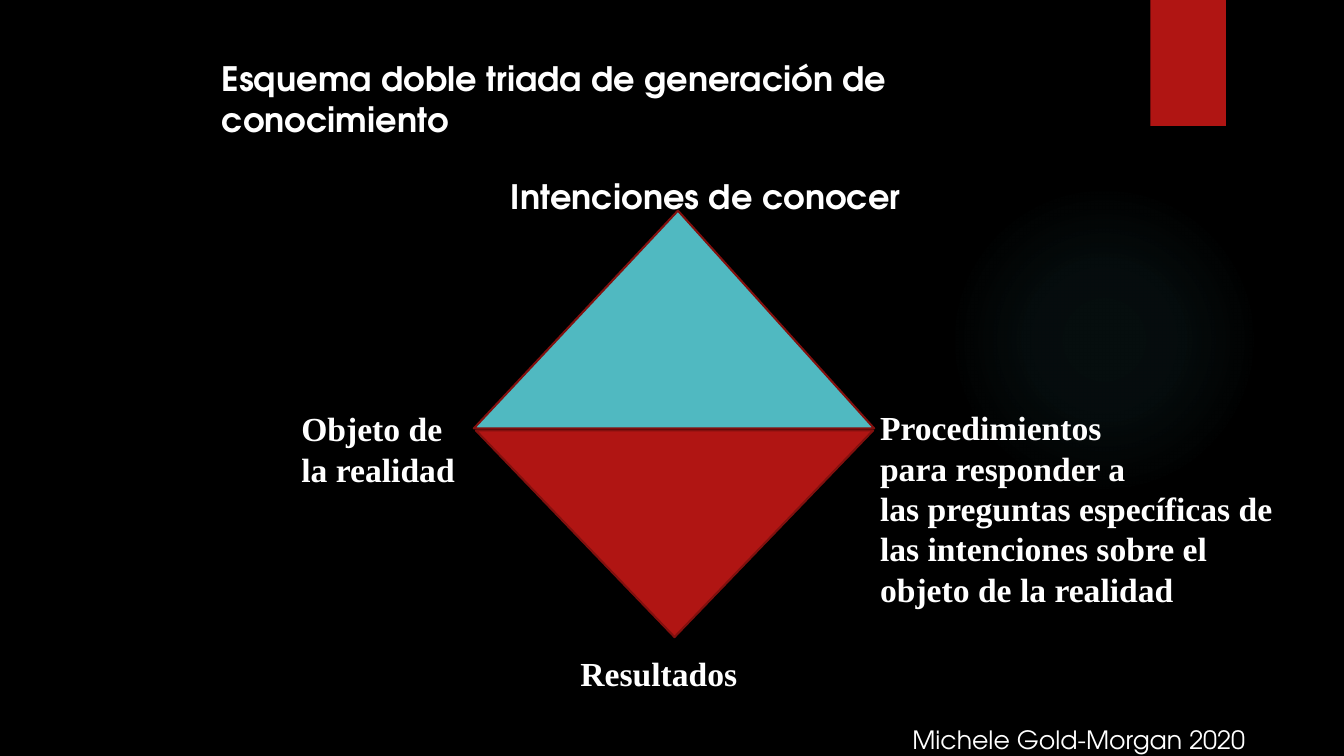
from lxml import etree
from pptx import Presentation
from pptx.dml.color import RGBColor
from pptx.enum import shapes, text
from pptx.oxml import ns
from pptx.util import Inches, Pt

BLACK = RGBColor(0x00, 0x00, 0x00)
WHITE = RGBColor(0xFF, 0xFF, 0xFF)
RED = RGBColor(0xB0, 0x15, 0x13)
DARK_RED = RGBColor(0x82, 0x10, 0x0E)
TEAL = RGBColor(0x50, 0xB9, 0xC1)
SANS = "TeX Gyre Adventor"
SERIF = "Times New Roman"
GLOW_STOPS = [(0, 7), (36, 6), (69, 0)]


def add_figure(slide, preset, box, fill, line=None):
    """Place a flat preset shape in a box of left, top, width and height."""
    figure = slide.shapes.add_shape(preset, *map(Inches, box))
    figure.shadow.inherit = False
    figure.fill.solid()
    figure.fill.fore_color.rgb = fill
    if line is None:
        figure.line.fill.background()
    else:
        figure.line.color.rgb = line
        figure.line.width = Pt(1.5)
    return figure


def add_label(slide, box, lines, font, size=24, bold=True, align=text.PP_ALIGN.LEFT):
    """Place white text in a box, one paragraph per line."""
    frame = slide.shapes.add_textbox(*map(Inches, box)).text_frame
    frame.word_wrap = True
    frame.auto_size = text.MSO_AUTO_SIZE.SHAPE_TO_FIT_TEXT
    frame.text = "\n".join(lines)
    for paragraph in frame.paragraphs:
        paragraph.alignment = align
        paragraph.font.name = font
        paragraph.font.size = Pt(size)
        paragraph.font.bold = bold
        paragraph.font.color.rgb = WHITE


def add_glow(slide, box):
    """Place a circle that fades out radially from its centre."""
    glow = add_figure(slide, shapes.MSO_SHAPE.OVAL, box, TEAL)
    gradient = etree.Element(ns.qn("a:gradFill"), rotWithShape="1")
    stops = etree.SubElement(gradient, ns.qn("a:gsLst"))
    for position, opacity in GLOW_STOPS:
        stop = etree.SubElement(stops, ns.qn("a:gs"), pos=str(position * 1000))
        color = etree.SubElement(stop, ns.qn("a:srgbClr"), val=str(TEAL))
        etree.SubElement(color, ns.qn("a:alpha"), val=str(opacity * 1000))
    shade = etree.SubElement(gradient, ns.qn("a:path"), path="circle")
    etree.SubElement(shade, ns.qn("a:fillToRect"), l="50000", t="50000", r="50000", b="50000")
    properties = glow.element.spPr
    properties.replace(properties.find(ns.qn("a:solidFill")), gradient)


def add_backdrop(slide):
    """Draw the black background, the glow and the corner ribbon."""
    slide.background.fill.solid()
    slide.background.fill.fore_color.rgb = BLACK
    add_glow(slide, (9.41, 1.83, 3.08, 3.08))
    add_figure(slide, shapes.MSO_SHAPE.RECTANGLE, (11.41, 0, 0.75, 1.25), RED)


def add_double_triad(slide, left, top):
    """Draw the two facing triangles with a label at each corner."""
    triangle = shapes.MSO_SHAPE.ISOSCELES_TRIANGLE
    upper = add_figure(slide, triangle, (left, top, 3.97, 2.16), TEAL, DARK_RED)
    upper.adjustments[0] = 0.51
    lower = add_figure(slide, triangle, (left + 0.02, top + 2.18, 3.94, 2.05), RED, DARK_RED)
    lower.adjustments[0] = 0.5
    lower.rotation = 180
    add_label(slide, (left - 1.81, top + 1.91, 1.91, 0.91),
              ["Objeto de", "la realidad"], SERIF)
    add_label(slide, (left + 3.93, top + 1.9, 4.19, 2.12),
              ["Procedimientos", "para responder a", "las preguntas específicas de",
               "las intenciones sobre el", "objeto de la realidad"],
              SERIF, align=text.PP_ALIGN.JUSTIFY)
    add_label(slide, (left - 0.37, top + 4.34, 4.41, 0.5),
              ["Resultados"], SERIF, align=text.PP_ALIGN.CENTER)
    add_label(slide, (left + 0.27, top - 0.39, 4.53, 0.5), ["Intenciones de conocer"], SANS)


def main():
    """Build the slide and save it."""
    deck = Presentation()
    deck.slide_width, deck.slide_height = Inches(13.33), Inches(7.5)
    slide = deck.slides.add_slide(deck.slide_layouts[6])
    add_backdrop(slide)
    add_double_triad(slide, 4.7, 2.09)
    add_label(slide, (2.1, 0.53, 7.72, 0.91),
              ["Esquema doble triada de generación de conocimiento"], SANS)
    add_label(slide, (8.95, 7.14, 4.16, 0.4),
              ["Michele Gold-Morgan 2020"], SANS, size=18, bold=False)
    deck.save("out.pptx")


if __name__ == "__main__":
    main()
